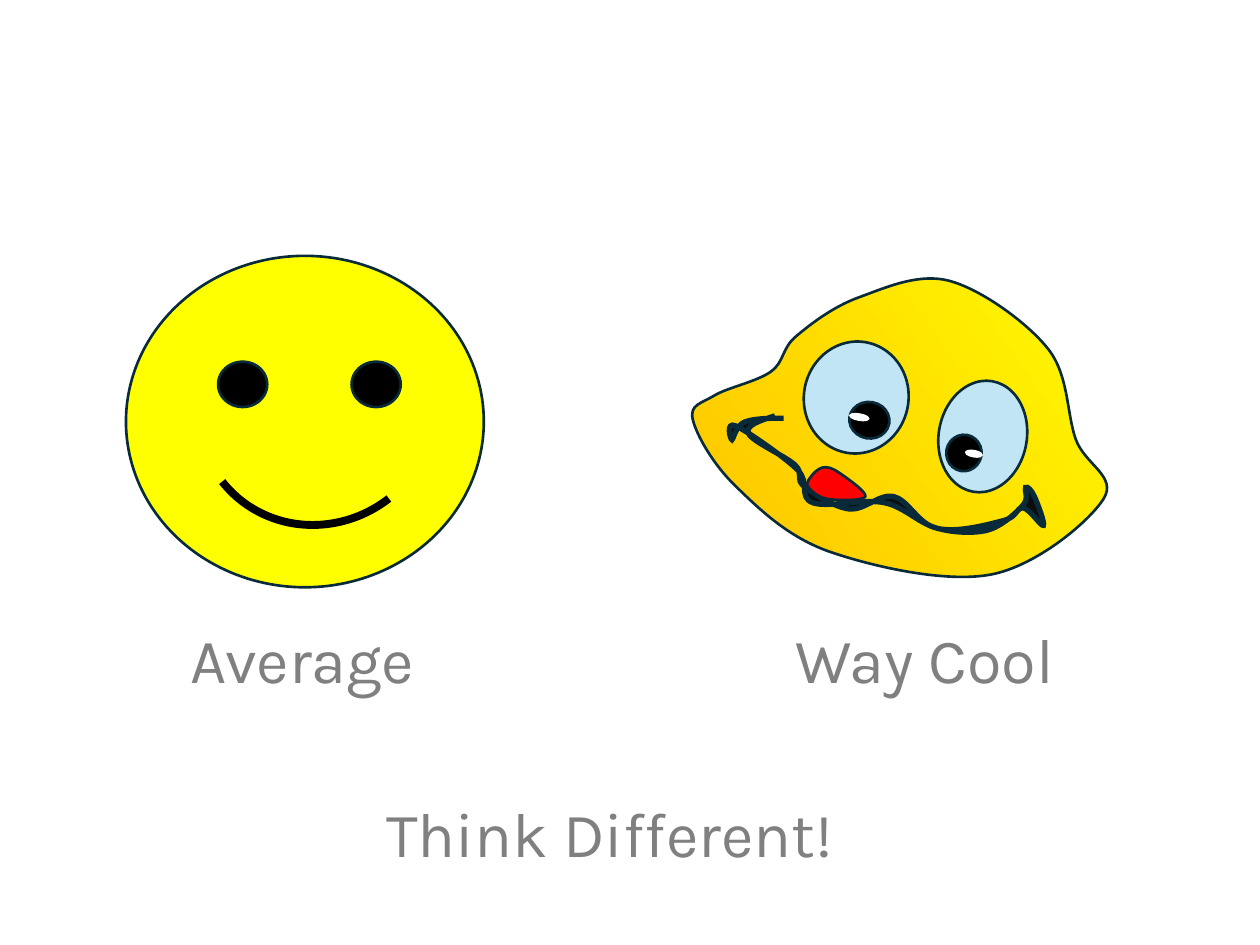
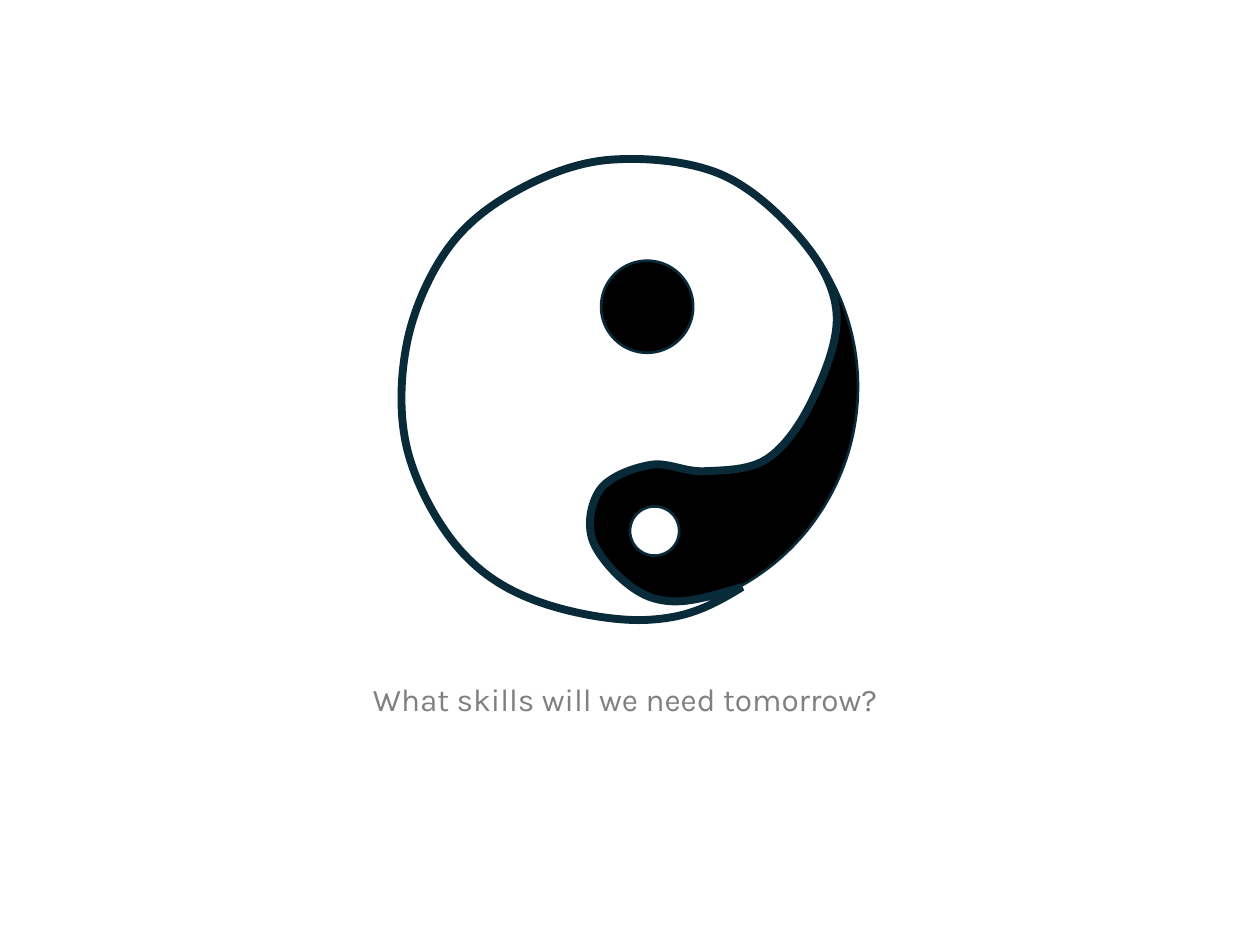
import math

import lxml.etree
import pptx
import pptx.dml.color
import pptx.enum.shapes
import pptx.enum.text
import pptx.oxml.ns
import pptx.util

Pt = pptx.util.Pt
qn = pptx.oxml.ns.qn
SHAPES = pptx.enum.shapes.MSO_SHAPE

FONT = "Karla"
COLORS = {
    "caption": "808080",
    "outline": "092A39",
    "black": "000000",
    "white": "FFFFFF",
    "smiley": "FFFF00",
    "amber": "FFC000",
    "eyeball": "C1E5F5",
    "mouth": "0D0D0D",
    "tongue": "FF0000",
}
TILT = 9.8  # degrees, clockwise

# Anchors are in points, relative to the box of their drawing.
HEAD = [(146.9, 4.6), (95, 13.9), (59, 36.2), (44.6, 56.4), (12.2, 70.1), (0, 83.8),
        (24.5, 121.9), (78.5, 159.4), (170.6, 172.3), (234.7, 129.1), (218.9, 95.3),
        (203, 43.4)]
GRIN = [(51.8, 83), (29.5, 85.2), (22.3, 95.3), (24.5, 87.4), (59.8, 112.6),
        (68.4, 131.3), (109.4, 131.3), (141.8, 146.4), (177.8, 141.4), (188.6, 134.2),
        (200.2, 144.2), (195.1, 127.7), (190.1, 122.6), (188.6, 132.7), (167.8, 147.1),
        (136.8, 145), (114.5, 127.7), (89.3, 134.9), (63.4, 121.9), (58.3, 109.7),
        (31.7, 91.7), (46.8, 81.6)]
TONGUE = [(98.6, 127.7), (83.5, 114), (74.2, 111.1), (67, 116.9), (66.2, 122.6),
          (77, 129.1)]
YANG = [(194.4, 244.8), (141.1, 263.5), (74.9, 252), (31, 221), (2.9, 165.6),
        (2.9, 105.1), (25.9, 51.8), (64.8, 18.7), (118.1, 0.7), (181.4, 8.6),
        (228.2, 46.1), (248.4, 88.6), (234.7, 137.5), (208.8, 171.4), (172.8, 178.6),
        (141.8, 175), (113, 189.4), (110.2, 221), (144, 251.3), (194.4, 244.8)]


def rgb(name):
    return pptx.dml.color.RGBColor.from_string(COLORS[name])


def style(shape, fill, line="outline", weight=1.5):
    shape.shadow.inherit = False
    if fill:
        shape.fill.solid()
        shape.fill.fore_color.rgb = rgb(fill)
    else:
        shape.fill.background()
    shape.line.color.rgb = rgb(line)
    shape.line.width = Pt(weight)
    outline = shape.element.spPr.find(qn("a:ln"))
    lxml.etree.SubElement(outline, qn("a:miter"), lim="800000")


def add_ellipse(group, origin, box, fill, line="outline", tilt=0):
    left, top, width, height = box
    ellipse = group.shapes.add_shape(
        SHAPES.OVAL, Pt(origin[0] + left), Pt(origin[1] + top), Pt(width), Pt(height))
    ellipse.rotation = tilt
    style(ellipse, fill, line)


def spline(anchors, ends=None):
    """Bezier pieces (start, control, control, end) through the anchors; ends are
    the guides before and after an open curve, else the curve closes on itself."""
    if ends:
        guides = [ends[0], *anchors, ends[1]]
    else:
        guides = [anchors[-1], *anchors, *anchors[:2]]
    pieces = []
    for before, start, end, after in zip(guides, guides[1:], guides[2:], guides[3:]):
        leave = tuple(s + (e - b) / 6 for b, s, e in zip(before, start, end))
        arrive = tuple(e - (a - s) / 6 for s, e, a in zip(start, end, after))
        pieces.append((start, leave, arrive, end))
    return pieces


def point_on(piece, t):
    return tuple((1 - t) ** 3 * a + 3 * t * (1 - t) ** 2 * b + 3 * t ** 2 * (1 - t) * c
                 + t ** 3 * d for a, b, c, d in zip(*piece))


def turn(point, center, degrees):
    angle = math.radians(degrees)
    dx, dy = point[0] - center[0], point[1] - center[1]
    return (center[0] + dx * math.cos(angle) - dy * math.sin(angle),
            center[1] + dx * math.sin(angle) + dy * math.cos(angle))


def add_curve(group, origin, anchors, fill, weight=1.5, ends=None, close=True,
              center=(0, 0), tilt=0):
    """Freeform whose anchors are given as seen after tilting about center."""
    def place(point):
        x, y = turn(point, center, -tilt)
        return Pt(origin[0] + x), Pt(origin[1] + y)

    pieces = [tuple(map(place, piece)) for piece in spline(anchors, ends)]
    # Points along the curve give the freeform its exact bounds.
    along = [point_on(piece, step / 10) for piece in pieces for step in range(1, 11)]
    builder = group.shapes.build_freeform(*pieces[0][0])
    builder.add_line_segments(along, close=False)
    curve = builder.convert_to_shape()

    # The straight pieces then give way to one Bezier per anchor.
    contour = curve.element.find(".//" + qn("a:path"))
    for straight in contour.findall(qn("a:lnTo")):
        contour.remove(straight)
    left, top = curve.left, curve.top
    for piece in pieces:
        bezier = lxml.etree.SubElement(contour, qn("a:cubicBezTo"))
        for x, y in piece[1:]:
            lxml.etree.SubElement(bezier, qn("a:pt"), x=str(x - left), y=str(y - top))
    if close:
        lxml.etree.SubElement(contour, qn("a:close"))
    curve.rotation = tilt
    style(curve, fill, weight=weight)
    return curve


def add_caption(slide, words, box, size):
    caption = slide.shapes.add_textbox(*map(Pt, box))
    frame = caption.text_frame
    frame.word_wrap = True
    frame.auto_size = pptx.enum.text.MSO_AUTO_SIZE.SHAPE_TO_FIT_TEXT
    paragraph = frame.paragraphs[0]
    paragraph.text = words
    paragraph.alignment = pptx.enum.text.PP_ALIGN.CENTER
    paragraph.font.name = FONT
    paragraph.font.size = Pt(size)
    paragraph.font.color.rgb = rgb("caption")


def add_cool_face(slide, origin):
    face = slide.shapes.add_group_shape()
    head = add_curve(face, origin, HEAD, "amber", center=(121, 85.6), tilt=TILT)
    head.fill.gradient()
    head.fill.gradient_angle = 45
    for stop, color in zip(head.fill.gradient_stops, ("amber", "smiley")):
        stop.color.rgb = rgb(color)

    eyes = [
        [(63.4, 39.1, 59.8, 64.1), (89.3, 73.7, 23, 20.9), (90, 80.9, 10.1, 2.9)],
        [(140.4, 61.4, 50.4, 64.1), (144.7, 92.4, 20.2, 20.9), (156.2, 101.8, 8.6, 2.9)],
    ]
    for eyeball, pupil, glint in eyes:
        add_ellipse(face, origin, eyeball, "eyeball", tilt=TILT)
        add_ellipse(face, origin, pupil, "black", tilt=TILT)
        add_ellipse(face, origin, glint, "white", "white", tilt=TILT)

    add_curve(face, origin, GRIN, "mouth", weight=3, close=False,
              ends=[(81.4, 85.2), (83.5, 74.4)], center=(110.5, 116.9), tilt=TILT)
    add_curve(face, origin, TONGUE, "tongue", center=(82.8, 121.6), tilt=TILT)


def add_average_face(slide, origin):
    face = slide.shapes.add_group_shape()
    add_ellipse(face, origin, (0, 0, 204.5, 189.4), "smiley")
    for eye_left in (52.6, 128.9):
        add_ellipse(face, origin, (eye_left, 60.5, 28.1, 25.9), "black")
    smile = face.shapes.add_shape(
        SHAPES.ARC, Pt(origin[0] + 40.3), Pt(origin[1] + 20.2), Pt(138.2), Pt(132.5))
    smile.rotation = 142
    style(smile, None, "black", 4.5)


def add_yin_yang(slide, origin):
    symbol = slide.shapes.add_group_shape()
    add_ellipse(symbol, origin, (0, 0, 260.6, 260.6), "black")
    add_ellipse(symbol, origin, (130.3, 198.7, 28.1, 28.1), "white")
    # The white half covers the disc but leaves the lower dot free.
    add_curve(symbol, origin, YANG, "white", weight=4.5,
              ends=[(266.4, 185.8), (290.9, 208.1)])
    add_ellipse(symbol, origin, (113.8, 58.3, 52.6, 52.6), "black")


def build_faces_slide(slide):
    add_caption(slide, "Think Different!", (3.6, 450.7, 689.8, 51.1), 36)
    add_cool_face(slide, (396, 156))
    for words, left in (("Average", 57.6), ("Way Cool", 413.3)):
        add_caption(slide, words, (left, 351, 230.4, 51.1), 36)
    add_average_face(slide, (72, 146.2))


def build_skills_slide(slide):
    add_caption(slide, "What skills will we need tomorrow?",
                (12.4, 384.8, 689.8, 28.8), 18)
    add_yin_yang(slide, (229.7, 90.7))


def main():
    deck = pptx.Presentation()
    deck.slide_width, deck.slide_height = Pt(720), Pt(540)
    blank = deck.slide_layouts[6]
    for build in (build_faces_slide, build_skills_slide):
        build(deck.slides.add_slide(blank))
    deck.save("out.pptx")


if __name__ == "__main__":
    main()
